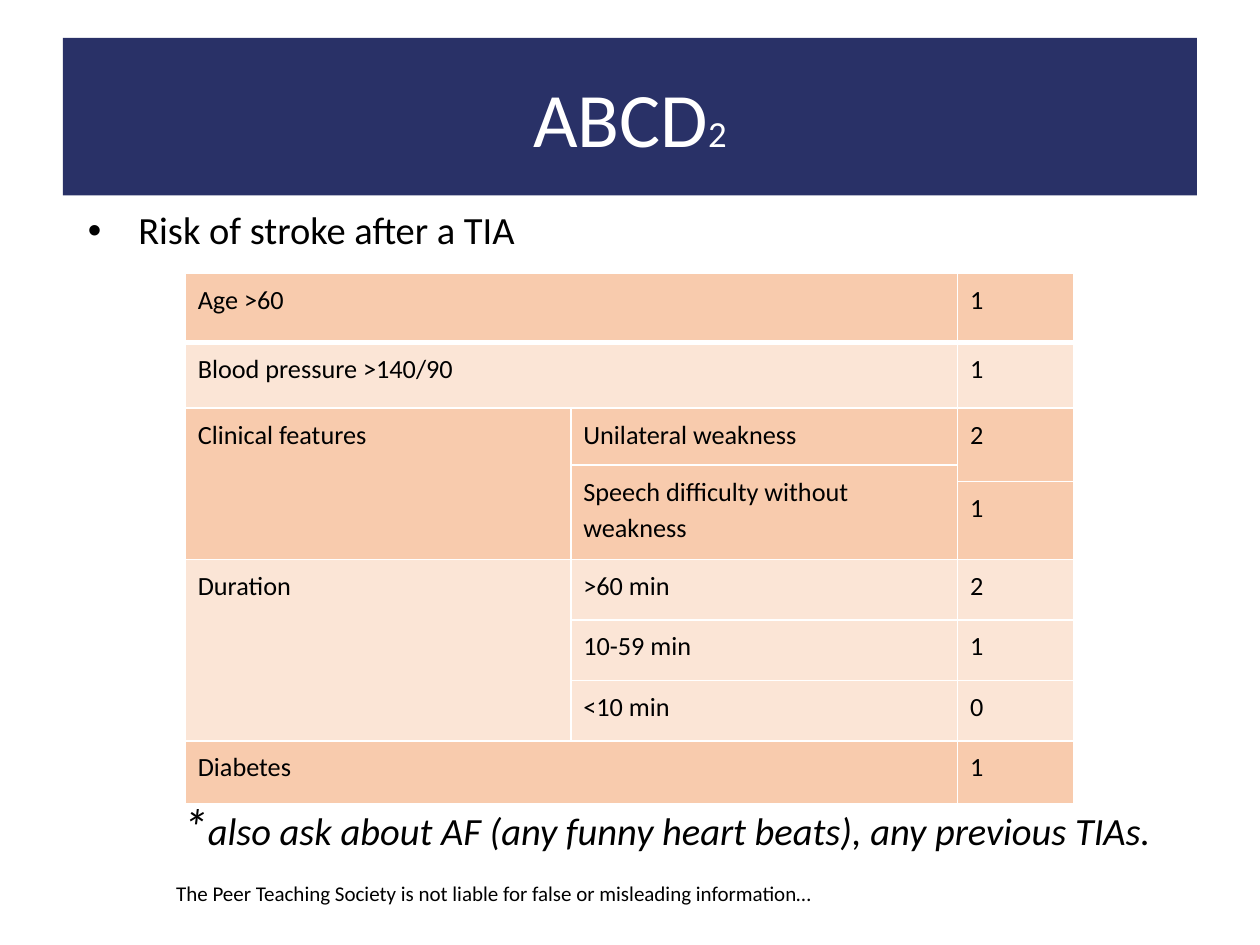
from dataclasses import dataclass

from lxml import etree
from pptx import Presentation
from pptx.dml.color import RGBColor
from pptx.enum.shapes import MSO_SHAPE
from pptx.enum.text import MSO_ANCHOR, PP_ALIGN
from pptx.oxml.ns import qn
from pptx.util import Inches, Pt

RECT = MSO_SHAPE.RECTANGLE
TOP, MIDDLE = MSO_ANCHOR.TOP, MSO_ANCHOR.MIDDLE
LEFT, CENTER = PP_ALIGN.LEFT, PP_ALIGN.CENTER
FONT = "Calibri"
NAVY, WHITE, BLACK = "293167", "FFFFFF", "000000"
DARK, LIGHT = "F8CBAD", "FBE5D6"


@dataclass
class Entry:
    """A table cell with its place and span."""
    row: int
    col: int
    text: str
    rows: int = 1
    cols: int = 1


COL_WIDTHS = [3.06, 3.07, 0.92]
ROW_HEIGHTS = [0.55, 0.52, 0.45, 0.13, 0.62, 0.48, 0.48, 0.48, 0.5]
ROW_FILLS = [DARK, LIGHT] + [DARK] * 3 + [LIGHT] * 3 + [DARK]
ENTRIES = [
    Entry(0, 0, "Age >60", cols=2), Entry(0, 2, "1"),
    Entry(1, 0, "Blood pressure >140/90", cols=2), Entry(1, 2, "1"),
    Entry(2, 0, "Clinical features", rows=3),
    Entry(2, 1, "Unilateral weakness"), Entry(2, 2, "2", rows=2),
    Entry(3, 1, "Speech difficulty without weakness", rows=2),
    Entry(4, 2, "1"),
    Entry(5, 0, "Duration", rows=3),
    Entry(5, 1, ">60 min"), Entry(5, 2, "2"),
    Entry(6, 1, "10-59 min"), Entry(6, 2, "1"),
    Entry(7, 1, "<10 min"), Entry(7, 2, "0"),
    Entry(8, 0, "Diabetes", cols=2), Entry(8, 2, "1"),
]


def rgb(value: str) -> RGBColor:
    return RGBColor.from_string(value)


def add_run(p, text: str, size: float, color: str = BLACK, italic: bool = False) -> None:
    r = p.add_run()
    r.text = text
    r.font.name = FONT
    r.font.size = Pt(size)
    r.font.italic = italic
    r.font.color.rgb = rgb(color)


def set_frame(tf, runs: list[tuple[str, float]], *, color: str = BLACK,
              italic: bool = False, align: PP_ALIGN = LEFT,
              anchor: MSO_ANCHOR = TOP, inset: float = 0.1,
              spacing: float = 1.0):
    """Fill a text frame with one paragraph of (text, size) runs."""
    tf.word_wrap = True
    tf.vertical_anchor = anchor
    tf.margin_left = tf.margin_right = Inches(0.1)
    tf.margin_top = tf.margin_bottom = Inches(inset)
    p = tf.paragraphs[0]
    p.alignment = align
    p.line_spacing = spacing
    for text, size in runs:
        add_run(p, text, size, color, italic)
    return p


def add_text(s, box: tuple[float, ...], runs: list[tuple[str, float]], **fmt):
    sp = s.shapes.add_textbox(*map(Inches, box))
    return set_frame(sp.text_frame, runs, **fmt)


def add_bullet(p, indent: float, hanging: float) -> None:
    pPr = p._p.get_or_add_pPr()
    pPr.set("marL", str(Inches(indent)))
    pPr.set("indent", str(-Inches(hanging)))
    etree.SubElement(pPr, qn("a:buFont"), typeface="Arial")
    etree.SubElement(pPr, qn("a:buChar"), char="•")


def set_borders(cell, **widths: float) -> None:
    """Draw white borders, 1 pt unless a side (L, R, T, B) says otherwise."""
    tcPr = cell._tc.get_or_add_tcPr()
    for side in "LRTB":
        ln = etree.SubElement(tcPr, qn(f"a:ln{side}"), w=str(Pt(widths.get(side, 1))))
        fill = etree.SubElement(ln, qn("a:solidFill"))
        etree.SubElement(fill, qn("a:srgbClr"), val=WHITE)


def add_score_table(s, left: float, top: float) -> None:
    size = Inches(sum(COL_WIDTHS)), Inches(sum(ROW_HEIGHTS))
    table = s.shapes.add_table(len(ROW_HEIGHTS), len(COL_WIDTHS),
                               Inches(left), Inches(top), *size).table
    for col, width in zip(table.columns, COL_WIDTHS):
        col.width = Inches(width)
    for i, (row, height) in enumerate(zip(table.rows, ROW_HEIGHTS)):
        row.height = Inches(height)
        thick = {0: {"B": 3}, 1: {"T": 3}}.get(i, {})
        for cell in row.cells:
            set_borders(cell, **thick)
            cell.fill.solid()
            cell.fill.fore_color.rgb = rgb(ROW_FILLS[i])
    for e in ENTRIES:
        cell = table.cell(e.row, e.col)
        if e.rows > 1 or e.cols > 1:
            cell.merge(table.cell(e.row + e.rows - 1, e.col + e.cols - 1))
        p = cell.text_frame.paragraphs[0]
        p.line_spacing = 1.15
        add_run(p, e.text, 15)


def main() -> None:
    prs = Presentation()
    prs.slide_width, prs.slide_height = Inches(10), Inches(7.5)
    s = prs.slides.add_slide(prs.slide_layouts[6])

    # Disclaimer
    add_text(s, (1.3, 6.94, 5.54, 0.3),
             [("The Peer Teaching Society is not liable for false or misleading information…", 12)],
             inset=0.05)

    # Title band
    sp = s.shapes.add_shape(RECT, Inches(0.5), Inches(0.3), Inches(9), Inches(1.25))
    sp.shadow.inherit = False
    sp.fill.solid()
    sp.fill.fore_color.rgb = rgb(NAVY)
    sp.line.fill.background()
    set_frame(sp.text_frame, [("ABCD", 44), ("2", 21)], color=WHITE,
              align=CENTER, anchor=MIDDLE)

    # Lead bullet
    p = add_text(s, (0.5, 1.55, 9, 0.6), [("Risk of stroke after a TIA", 22)], spacing=0.98)
    add_bullet(p, 0.5, 0.4)

    # Score table and its footnote
    add_score_table(s, 1.47, 2.17)
    add_text(s, (1.35, 6.23, 8.15, 0.68),
             [("*", 29), ("also ask about AF (any funny heart beats), any previous TIAs.", 22)],
             italic=True, spacing=0.98)

    prs.save("out.pptx")


if __name__ == "__main__":
    main()
